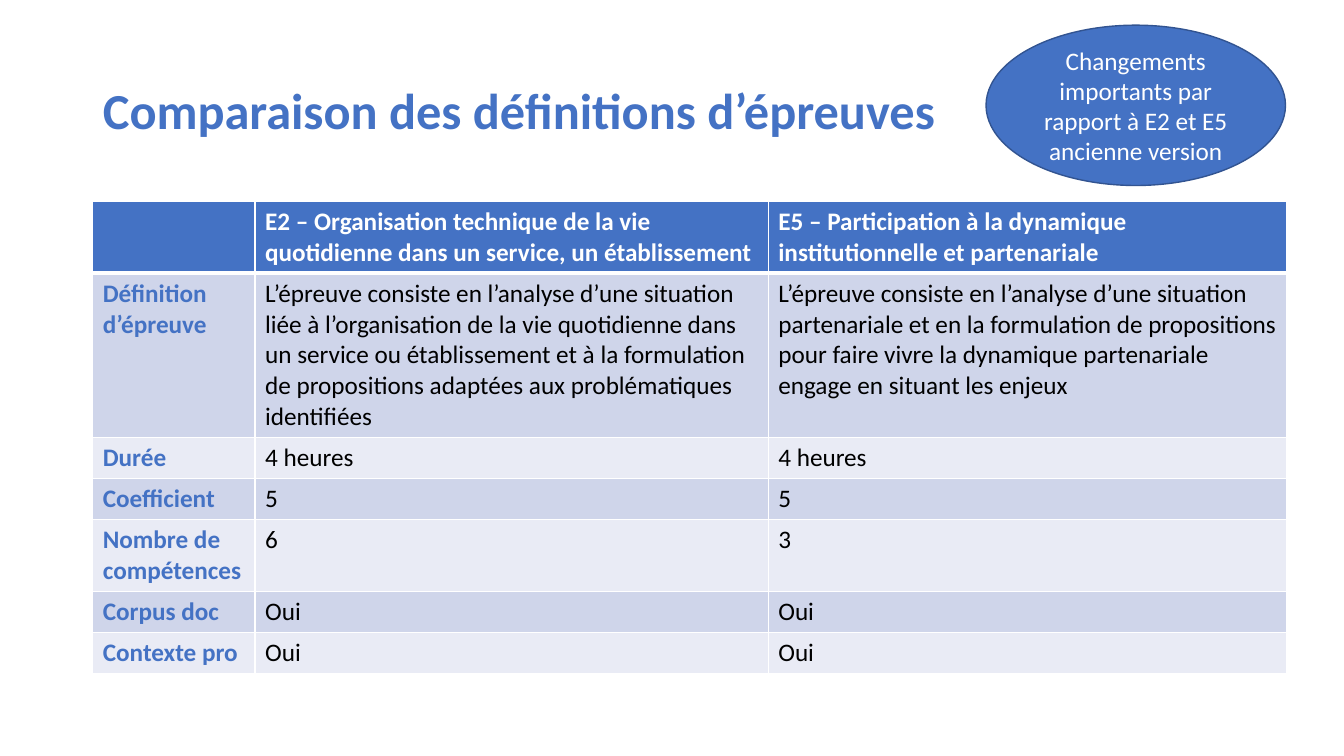
import dataclasses
import typing

import lxml.etree
import pptx
import pptx.dml.color
import pptx.enum.shapes
import pptx.enum.text
import pptx.oxml.ns
import pptx.util

Inches = pptx.util.Inches
Align = pptx.enum.text.PP_ALIGN
Anchor = pptx.enum.text.MSO_ANCHOR


@dataclasses.dataclass(frozen=True)
class Theme:
    font: str = "Calibri"
    accent: str = "4472C4"
    outline: str = "325491"
    white: str = "FFFFFF"
    black: str = "000000"
    bands: tuple[str, str] = ("CFD5EA", "E9EBF5")
    title_size: int = 36
    body_size: int = 18
    thin: int = 1
    thick: int = 3


@dataclasses.dataclass(frozen=True)
class Criterion:
    label: str
    e2: str
    e5: str


THEME = Theme()
ROW_HEIGHT = 0.41
COLUMN_WIDTHS = (1.61, 5.09, 5.14)

HEADER = Criterion(
    "",
    "E2 – Organisation technique de la vie quotidienne dans un service, un établissement",
    "E5 – Participation à la dynamique institutionnelle et partenariale",
)
CRITERIA = (
    Criterion(
        "Définition d’épreuve",
        "L’épreuve consiste en l’analyse d’une situation liée à l’organisation de la vie "
        "quotidienne dans un service ou établissement et à la formulation de propositions "
        "adaptées aux problématiques identifiées",
        "L’épreuve consiste en l’analyse d’une situation partenariale et en la formulation "
        "de propositions pour faire vivre la dynamique partenariale engage en situant les enjeux",
    ),
    Criterion("Durée", "4 heures", "4 heures"),
    Criterion("Coefficient", "5", "5"),
    Criterion("Nombre de compétences", "6", "3"),
    Criterion("Corpus doc", "Oui", "Oui"),
    Criterion("Contexte pro", "Oui", "Oui"),
)


def rgb(value: str) -> pptx.dml.color.RGBColor:
    return pptx.dml.color.RGBColor.from_string(value)


def write(frame: typing.Any, text: str, *, color: str, size: int = THEME.body_size,
          bold: bool = False, align: Align = Align.LEFT,
          spacing: float = 1.0) -> None:
    """Fill a text frame with one formatted paragraph."""
    frame.word_wrap = True
    para = frame.paragraphs[0]
    para.alignment = align
    para.line_spacing = spacing
    para.font.size = pptx.util.Pt(size)
    if not text:
        return
    span = para.add_run()
    span.text = text
    span.font.name = THEME.font
    span.font.size = pptx.util.Pt(size)
    span.font.bold = bold
    span.font.color.rgb = rgb(color)


def set_borders(cell: typing.Any, *, top: int, bottom: int) -> None:
    """Draw white cell borders, with widths in points."""
    qn = pptx.oxml.ns.qn
    properties = cell._tc.get_or_add_tcPr()
    widths = {"a:lnL": THEME.thin, "a:lnR": THEME.thin, "a:lnT": top, "a:lnB": bottom}
    for index, (tag, width) in enumerate(widths.items()):
        line = lxml.etree.Element(qn(tag), w=str(pptx.util.Pt(width)))
        fill = lxml.etree.SubElement(line, qn("a:solidFill"))
        lxml.etree.SubElement(fill, qn("a:srgbClr"), val=THEME.white)
        properties.insert(index, line)


def add_title(page: typing.Any, text: str) -> None:
    title = page.shapes.title
    title.left, title.top = Inches(0.92), Inches(0.4)
    title.width, title.height = Inches(11.5), Inches(1.45)
    title.text_frame.vertical_anchor = Anchor.MIDDLE
    title.text_frame.auto_size = pptx.enum.text.MSO_AUTO_SIZE.NONE
    write(title.text_frame, text, color=THEME.accent, size=THEME.title_size,
          bold=True, spacing=0.9)


def add_comparison(page: typing.Any) -> None:
    rows = (HEADER, *CRITERIA)
    frame = page.shapes.add_table(
        len(rows), len(COLUMN_WIDTHS), Inches(0.92), Inches(2),
        Inches(sum(COLUMN_WIDTHS)), Inches(ROW_HEIGHT * len(rows)))
    table = frame.table
    for column, width in zip(table.columns, COLUMN_WIDTHS):
        column.width = Inches(width)

    for r, row in enumerate(rows):
        is_header = r == 0
        background = THEME.accent if is_header else THEME.bands[(r - 1) % 2]
        for c, text in enumerate(dataclasses.astuple(row)):
            is_label = c == 0
            color = THEME.white if is_header else THEME.accent if is_label else THEME.black
            cell = table.cell(r, c)
            cell.fill.solid()
            cell.fill.fore_color.rgb = rgb(background)
            write(cell.text_frame, text, color=color, bold=is_header or is_label)
            set_borders(cell, top=THEME.thick if r == 1 else THEME.thin,
                        bottom=THEME.thick if is_header else THEME.thin)
    # Rows grow with their text
    frame.height = Inches(4.62)


def add_callout(page: typing.Any, text: str) -> None:
    callout = page.shapes.add_shape(
        pptx.enum.shapes.MSO_SHAPE.OVAL,
        Inches(9.78), Inches(0.25), Inches(2.97), Inches(1.59))
    callout.shadow.inherit = False
    callout.fill.solid()
    callout.fill.fore_color.rgb = rgb(THEME.accent)
    callout.line.color.rgb = rgb(THEME.outline)
    callout.line.width = pptx.util.Pt(THEME.thin)
    callout.text_frame.vertical_anchor = Anchor.MIDDLE
    write(callout.text_frame, text, color=THEME.white, align=Align.CENTER)


def main() -> None:
    deck = pptx.Presentation()
    deck.slide_width, deck.slide_height = Inches(13.33), Inches(7.5)

    # Title-only layout
    page = deck.slides.add_slide(deck.slide_layouts[5])
    add_title(page, "Comparaison des définitions d’épreuves")
    add_comparison(page)
    add_callout(page, "Changements importants par rapport à E2 et E5 ancienne version")
    deck.save("out.pptx")


if __name__ == "__main__":
    main()
